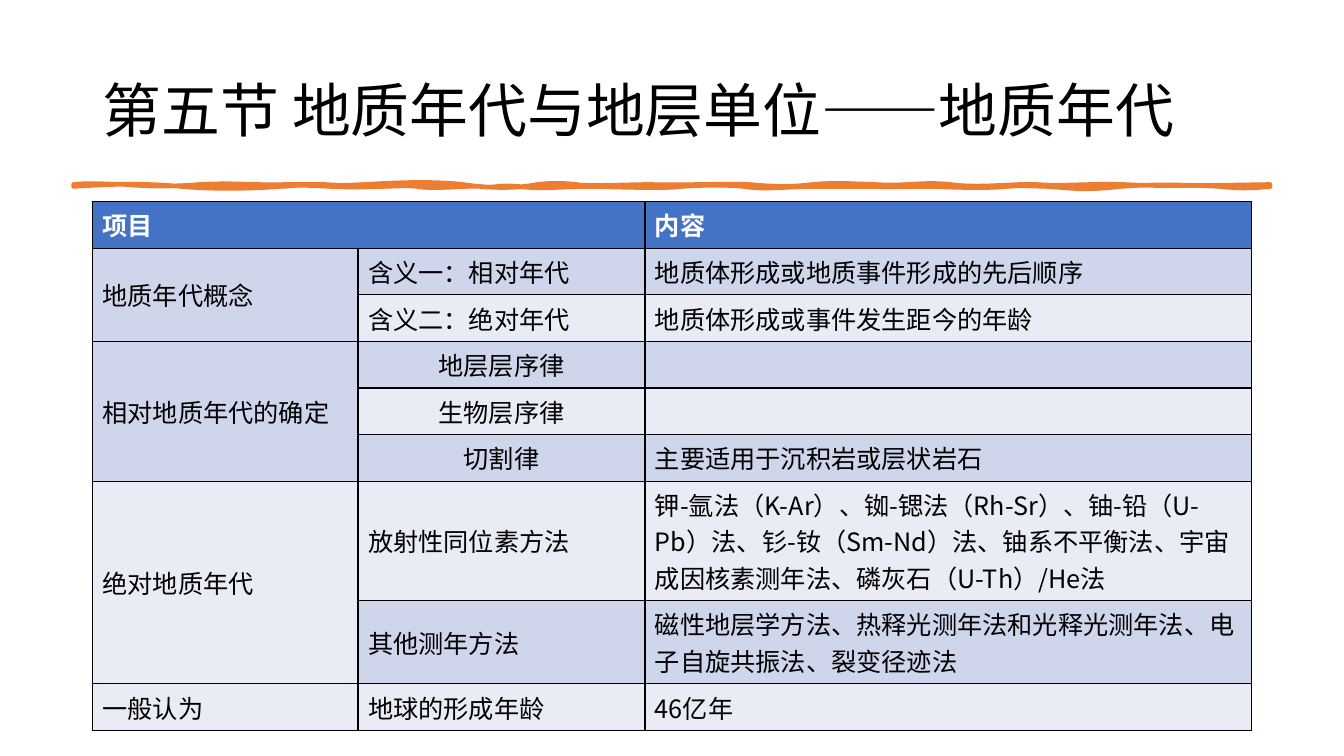
from dataclasses import dataclass
from typing import NamedTuple

from lxml import etree
from pptx import Presentation
from pptx.dml.color import RGBColor
from pptx.enum.text import MSO_ANCHOR, MSO_AUTO_SIZE, PP_ALIGN
from pptx.oxml.ns import qn
from pptx.util import Inches, Pt

LEFT, CENTER = PP_ALIGN.LEFT, PP_ALIGN.CENTER
TOP, MIDDLE = MSO_ANCHOR.TOP, MSO_ANCHOR.MIDDLE
FIXED_SIZE = MSO_AUTO_SIZE.NONE

GRID_COLUMNS, GRID_ROWS = 1333.33, 750
TITLE_ONLY = 5


@dataclass(frozen=True)
class Theme:
    font: str = "Noto Sans CJK SC"
    ink: str = "000000"
    paper: str = "FFFFFF"
    header: str = "4472C4"
    bands: tuple[str, str] = ("E9EBF5", "CFD5EA")
    brush: str = "ED7D31"
    title_size: float = 42
    table_size: float = 18
    border_width: float = 1
    brush_width: float = 3.25


class Area(NamedTuple):
    left: float
    top: float
    width: float
    height: float


class Curve(NamedTuple):
    x1: int
    y1: int
    x2: int
    y2: int
    end: int


@dataclass(frozen=True)
class Entry:
    label: str
    content: str = ""
    align: PP_ALIGN = LEFT


@dataclass(frozen=True)
class Topic:
    name: str
    entries: tuple[Entry, ...]


THEME = Theme()
TITLE = "第五节 地质年代与地层单位——地质年代"
TITLE_AREA = Area(91.67, 40, 1150, 145)
TABLE_AREA = Area(91.67, 200, 1150, 454)
TABLE_COLUMNS = (263.6, 284.6, 601.8)
TABLE_ROW = 40.6
HEADER = ("项目", "", "内容")
TOPICS = (
    Topic("地质年代概念", (
        Entry("含义一：相对年代", "地质体形成或地质事件形成的先后顺序"),
        Entry("含义二：绝对年代", "地质体形成或事件发生距今的年龄"),
    )),
    Topic("相对地质年代的确定", (
        Entry("地层层序律", align=CENTER),
        Entry("生物层序律", align=CENTER),
        Entry("切割律", "主要适用于沉积岩或层状岩石", CENTER),
    )),
    Topic("绝对地质年代", (
        Entry("放射性同位素方法",
              "钾-氩法（K-Ar）、铷-锶法（Rh-Sr）、铀-铅（U-Pb）法、钐-钕（Sm-Nd）法、"
              "铀系不平衡法、宇宙成因核素测年法、磷灰石（U-Th）/He法"),
        Entry("其他测年方法",
              "磁性地层学方法、热释光测年法和光释光测年法、电子自旋共振法、裂变径迹法"),
    )),
    Topic("一般认为", (Entry("地球的形成年龄", "46亿年"),)),
)

BRUSH_START, BRUSH_TOP, BRUSH_BOTTOM = 73, 183, 185
UPPER_EDGE = (
    Curve(89, 181, 111, 183, 124), Curve(136, 184, 162, 186, 198),
    Curve(234, 181, 251, 184, 284), Curve(317, 183, 307, 183, 322),
    Curve(338, 184, 342, 184, 361), Curve(380, 182, 424, 179, 459),
    Curve(494, 188, 517, 186, 533), Curve(549, 181, 563, 182, 572),
    Curve(581, 185, 625, 183, 646), Curve(667, 184, 723, 182, 744),
    Curve(765, 185, 782, 186, 806), Curve(830, 181, 838, 182, 868),
    Curve(899, 185, 914, 180, 943), Curve(972, 187, 1002, 182, 1029),
    Curve(1055, 185, 1078, 182, 1115), Curve(1151, 185, 1199, 184, 1260),
)
LOWER_EDGE = (
    Curve(1260, 184, 1260, 184, 1260),
    Curve(1242, 187, 1230, 187, 1210), Curve(1190, 184, 1149, 182, 1112),
    Curve(1075, 189, 1070, 187, 1038), Curve(1005, 184, 1018, 184, 999),
    Curve(980, 187, 948, 186, 925), Curve(902, 185, 884, 186, 863),
    Curve(841, 185, 828, 185, 800), Curve(773, 186, 757, 188, 738),
    Curve(719, 183, 688, 184, 676), Curve(663, 187, 624, 186, 590),
    Curve(555, 185, 537, 188, 515), Curve(494, 183, 491, 187, 477),
    Curve(463, 184, 430, 188, 414), Curve(399, 183, 371, 187, 328),
    Curve(286, 183, 303, 184, 278), Curve(253, 187, 213, 188, 180),
    Curve(147, 182, 118, 182, 73),
)


def grid(cells: float) -> int:
    return Inches(cells / 100)


def color(code: str) -> RGBColor:
    return RGBColor.from_string(code)


def style(paragraph, size: float, ink: str, align: PP_ALIGN, bold: bool = False) -> None:
    font = paragraph.font
    font.size, font.bold = Pt(size), bold
    font.color.rgb = color(ink)
    font.name = THEME.font
    properties = paragraph._p.pPr.find(qn("a:defRPr"))
    etree.SubElement(properties, qn("a:ea"), typeface=THEME.font)
    paragraph.alignment = align


def add_title(page) -> None:
    box = page.shapes.title
    box.left, box.top, box.width, box.height = map(grid, TITLE_AREA)
    frame = box.text_frame
    frame.text = TITLE
    frame.word_wrap = True
    frame.auto_size = FIXED_SIZE
    frame.vertical_anchor = MIDDLE
    para = frame.paragraphs[0]
    style(para, THEME.title_size, THEME.ink, LEFT)
    para.line_spacing = 0.9


def bend(shape, curves: tuple[Curve, ...]) -> None:
    segments = list(shape._element.iter(qn("a:lnTo")))
    for segment, curve in zip(segments, curves):
        segment.tag = qn("a:cubicBezTo")
        handles = ((curve.x1, curve.y1), (curve.x2, curve.y2))
        for position, (x, y) in enumerate(handles):
            handle = etree.Element(
                qn("a:pt"), x=str(grid(x) - shape.left), y=str(grid(y) - shape.top))
            segment.insert(position, handle)


def add_brush(page) -> None:
    upper = [(grid(curve.end), grid(BRUSH_TOP)) for curve in UPPER_EDGE]
    lower = [(grid(curve.end), grid(BRUSH_BOTTOM)) for curve in LOWER_EDGE]
    builder = page.shapes.build_freeform(grid(BRUSH_START), grid(BRUSH_TOP))
    builder.add_line_segments(upper + lower, close=True)
    brush = builder.convert_to_shape()
    bend(brush, UPPER_EDGE + LOWER_EDGE)
    brush.shadow.inherit = False
    brush.fill.solid()
    brush.fill.fore_color.rgb = color(THEME.brush)
    brush.line.color.rgb = color(THEME.brush)
    brush.line.width = Pt(THEME.brush_width)


def add_borders(cell) -> None:
    properties = cell._tc.get_or_add_tcPr()
    for position, side in enumerate(("lnL", "lnR", "lnT", "lnB")):
        line = etree.Element(qn(f"a:{side}"), w=str(Pt(THEME.border_width)))
        fill = etree.SubElement(line, qn("a:solidFill"))
        etree.SubElement(fill, qn("a:srgbClr"), val=THEME.ink)
        properties.insert(position, line)


def fill_row(table, row: int, texts: tuple[str, ...], align: PP_ALIGN = LEFT) -> None:
    is_header = row == 0
    shade = THEME.header if is_header else THEME.bands[row % 2]
    ink = THEME.paper if is_header else THEME.ink
    for column, text in enumerate(texts):
        cell = table.cell(row, column)
        cell.vertical_anchor = TOP if column == 2 else MIDDLE
        cell.fill.solid()
        cell.fill.fore_color.rgb = color(shade)
        add_borders(cell)
        if text:
            cell.text = text
            para = cell.text_frame.paragraphs[0]
            style(para, THEME.table_size, ink, align if column == 1 else LEFT, is_header)


def add_age_table(page) -> None:
    row_count = 1 + sum(len(topic.entries) for topic in TOPICS)
    holder = page.shapes.add_table(row_count, len(TABLE_COLUMNS), *map(grid, TABLE_AREA))
    table = holder.table
    for column, width in zip(table.columns, TABLE_COLUMNS):
        column.width = grid(width)
    for line in table.rows:
        line.height = grid(TABLE_ROW)
    holder.height = grid(TABLE_AREA.height)
    fill_row(table, 0, HEADER)
    table.cell(0, 0).merge(table.cell(0, 1))
    row = 1
    for topic in TOPICS:
        first = row
        for entry in topic.entries:
            name = topic.name if row == first else ""
            fill_row(table, row, (name, entry.label, entry.content), entry.align)
            row += 1
        if row - first > 1:
            table.cell(first, 0).merge(table.cell(row - 1, 0))


def main() -> None:
    deck = Presentation()
    deck.slide_width, deck.slide_height = grid(GRID_COLUMNS), grid(GRID_ROWS)
    page = deck.slides.add_slide(deck.slide_layouts[TITLE_ONLY])
    add_title(page)
    add_brush(page)
    add_age_table(page)
    deck.save("out.pptx")


if __name__ == "__main__":
    main()
